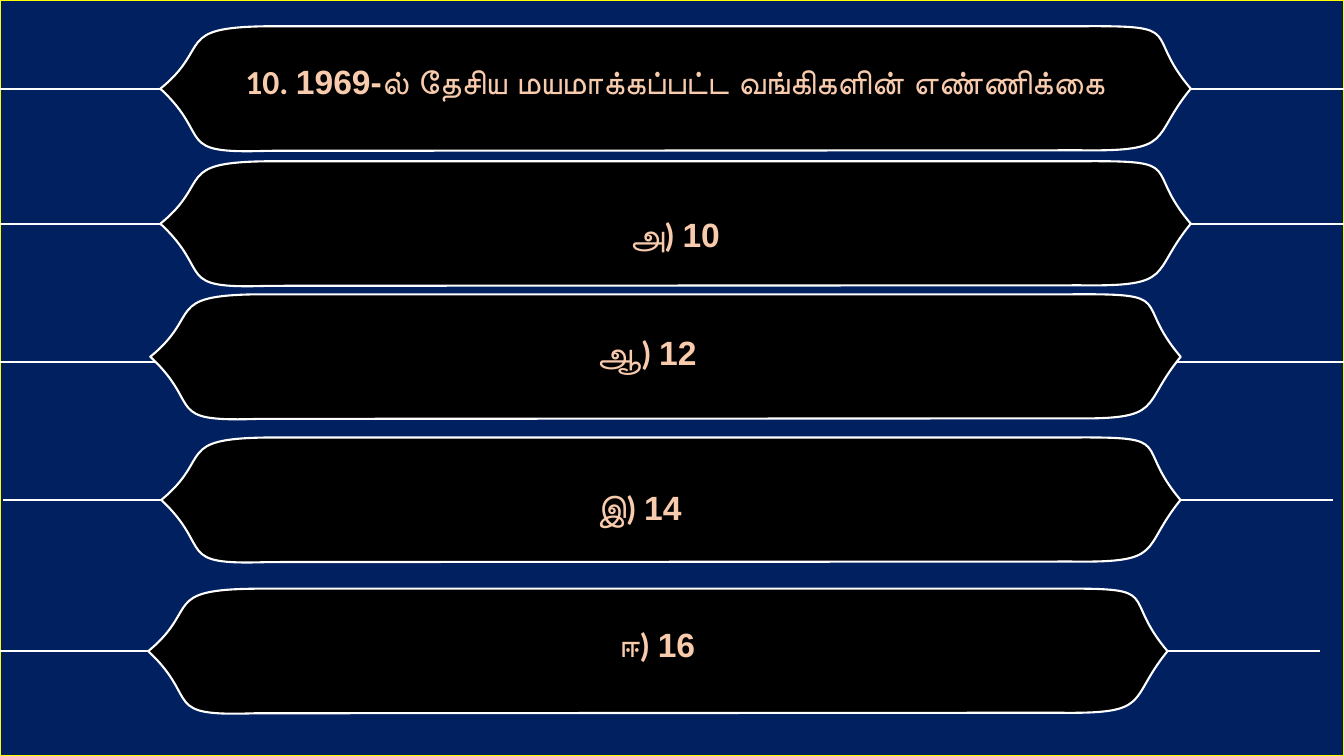
from collections import namedtuple
from dataclasses import dataclass

from lxml import etree
from pptx import Presentation
from pptx.dml.color import RGBColor
from pptx.enum import shapes, text
from pptx.oxml.ns import qn
from pptx.util import Inches, Pt


@dataclass(frozen=True)
class Theme:
    """Colours, fonts and sizes of the quiz slide."""
    back: str = "002060"
    frame: str = "FFFF00"
    panel: str = "000000"
    line: str = "FFFFFF"
    ink: str = "F8CBAD"
    label_font: str = "Calibri"
    text_font: str = "Arial"
    size: float = 24
    weight: float = 1.5


THEME = Theme()
WIDTH, HEIGHT = Inches(13.33), Inches(7.5)
PANEL_HEIGHT = 16.53
GRID = 1000
OUTLINE = [
    ("moveTo", [(0, 500)]),
    ("cubicBezTo", [(51, 160), (12, 8), (105, 0)]),
    ("lnTo", [(895, 0)]),
    ("cubicBezTo", [(998, -6), (953, 48), (1000, 500)]),
    ("cubicBezTo", [(960, 900), (986, 1003), (893, 993)]),
    ("lnTo", [(105, 997)]),
    ("cubicBezTo", [(11, 1024), (52, 895), (0, 500)]),
    ("close", []),
]

Row = namedtuple("Row", "left top width rail start end label words lift nudge")
ROWS = [
    Row(11.93, 3.47, 76.67, 11.73, 0, 100, "10. ",
        "1969-ல் தேசிய மயமாக்கப்பட்ட வங்கிகளின் எண்ணிக்கை", 4.7, 0.1),
    Row(11.93, 21.33, 76.67, 29.6, 0, 100, "அ) ", "10", 0, 0.1),
    Row(11.18, 38.93, 76.67, 47.87, 0, 100, "ஆ) ", "12", 3.9, 2.8),
    Row(12, 57.87, 75.84, 66.13, 0.23, 99.17, "", "", 0, 0),
    Row(11.03, 77.87, 75.84, 86.13, -0.75, 98.2, "ஈ) ", "16", 4.5, 0.1),
]


def across(share):
    """Turn a percentage of the slide width into a length."""
    return round(WIDTH * share / 100)


def down(share):
    """Turn a percentage of the slide height into a length."""
    return round(HEIGHT * share / 100)


def paint(sp, fill, line, weight):
    """Give a shape its fill and line and take away its shadow."""
    sp.shadow.inherit = False
    sp.fill.solid()
    sp.fill.fore_color.rgb = RGBColor.from_string(fill)
    sp.line.color.rgb = RGBColor.from_string(line)
    sp.line.width = Pt(weight)


def write(sp, label, words, spacing=1.0, lift=0, nudge=0):
    """Write a label and its words centred in a shape."""
    tf = sp.text_frame
    tf.word_wrap = True
    tf.vertical_anchor = text.MSO_ANCHOR.MIDDLE
    tf.margin_bottom = Inches(0.05) + down(lift)
    tf.margin_right = Inches(0.1) + across(nudge)
    p = tf.paragraphs[0]
    p.alignment = text.PP_ALIGN.CENTER
    p.line_spacing = spacing
    for part, font in ((label, THEME.label_font), (words, THEME.text_font)):
        r = p.add_run()
        r.text = part
        r.font.name = font
        r.font.size = Pt(THEME.size)
        r.font.bold = True
        r.font.color.rgb = RGBColor.from_string(THEME.ink)


def add_rail(group, row):
    """Draw the horizontal line that runs behind a panel."""
    y = down(row.rail)
    rail = group.shapes.add_connector(
        shapes.MSO_CONNECTOR.STRAIGHT, across(row.start), y, across(row.end), y)
    rail.line.color.rgb = RGBColor.from_string(THEME.line)
    rail.line.width = Pt(THEME.weight)
    etree.SubElement(rail._element.spPr, qn("a:effectLst"))


def curve_outline(sp):
    """Replace the straight sides of a freeform with the curved outline."""
    outline = next(sp._element.iter(qn("a:path")))
    for step in list(outline):
        outline.remove(step)
    outline.set("w", str(GRID))
    outline.set("h", str(GRID))
    for kind, points in OUTLINE:
        step = etree.SubElement(outline, qn(f"a:{kind}"))
        for x, y in points:
            etree.SubElement(step, qn("a:pt"), x=str(x), y=str(y))


def add_panel(group, row):
    """Draw the pointed panel of a row with its text."""
    left, right = across(row.left), across(row.left + row.width)
    top, bottom = down(row.top), down(row.top + PANEL_HEIGHT)
    builder = group.shapes.build_freeform(left, top)
    builder.add_line_segments([(right, top), (right, bottom), (left, bottom)])
    sp = builder.convert_to_shape()
    curve_outline(sp)
    paint(sp, THEME.panel, THEME.line, THEME.weight)
    if row.words:
        write(sp, row.label, row.words, spacing=1.5, lift=row.lift, nudge=row.nudge)


def add_backdrop(slide):
    """Cover the slide with the framed background."""
    sp = slide.shapes.add_shape(shapes.MSO_SHAPE.RECTANGLE, 0, 0, WIDTH, HEIGHT)
    paint(sp, THEME.back, THEME.frame, 1)


def main():
    """Build the quiz slide and save it."""
    prs = Presentation()
    prs.slide_width, prs.slide_height = WIDTH, HEIGHT
    slide = prs.slides.add_slide(prs.slide_layouts[6])
    add_backdrop(slide)
    for row in ROWS:
        group = slide.shapes.add_group_shape()
        add_rail(group, row)
        add_panel(group, row)
    answer = slide.shapes.add_textbox(
        across(22.96), down(63.73), across(51.99), down(6.67))
    write(answer, "இ) ", "14", nudge=2.8)
    prs.save("out.pptx")


if __name__ == "__main__":
    main()
